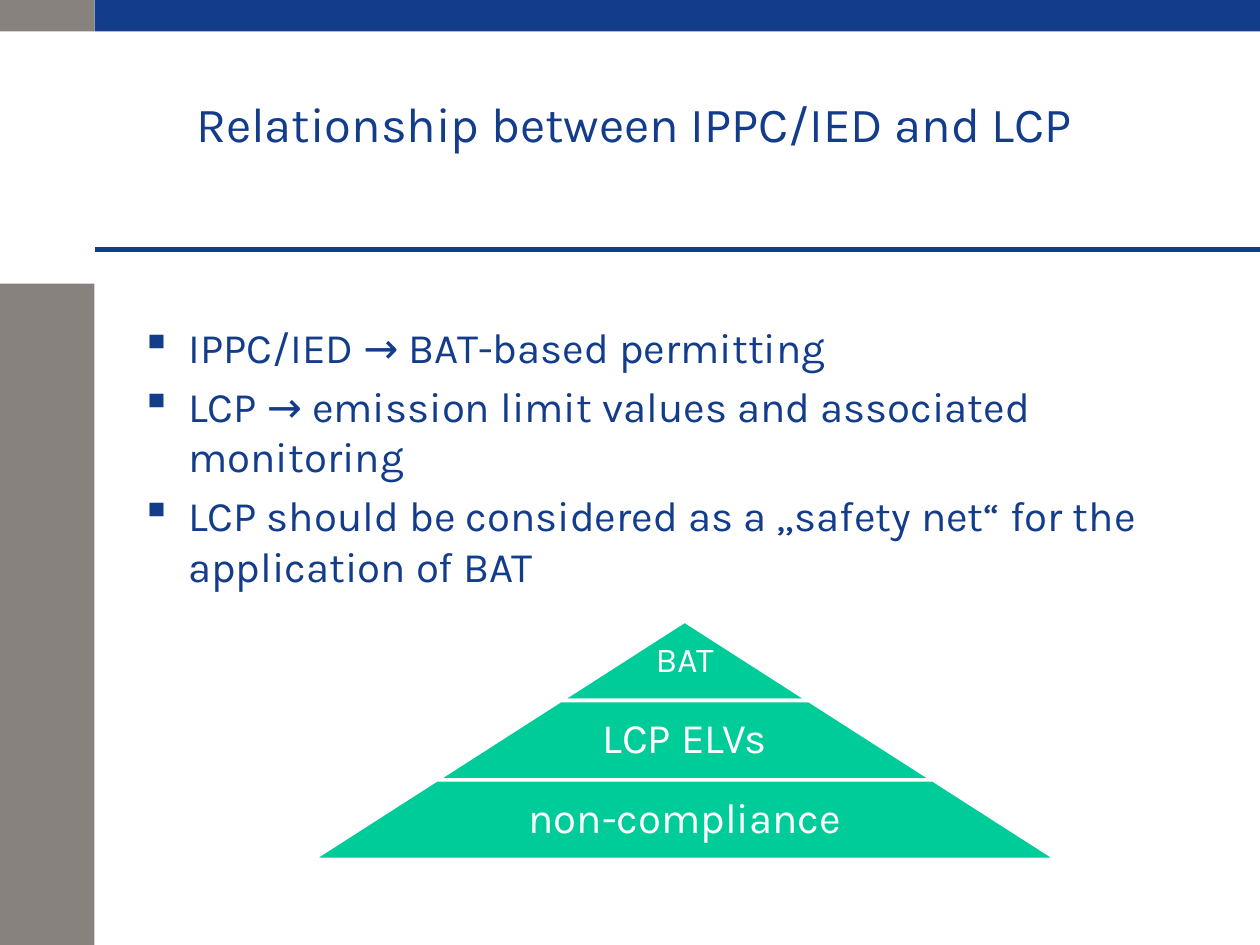
"""Build the slide on the relationship between IPPC/IED and LCP."""
from lxml import etree
from pptx import Presentation
from pptx.dml.color import RGBColor
from pptx.enum import shapes, text
from pptx.oxml import ns
from pptx.util import Pt

BLUE = RGBColor(0x13, 0x3C, 0x8B)
GREY = RGBColor(0x88, 0x82, 0x7E)
GREEN = RGBColor(0x00, 0xCC, 0x99)
WHITE = RGBColor(0xFF, 0xFF, 0xFF)
FONT = "Karla"

TITLE = "Relationship between IPPC/IED and LCP"
POINTS = [
    "IPPC/IED → BAT-based permitting",
    "LCP → emission limit values and associated monitoring",
    "LCP should be considered as a „safety net“ for the application of BAT",
]
TIERS = [("BAT", 20), ("LCP ELVs", 24), ("non-compliance", 24)]
BANDS = [
    (0, 162, 54, 378, GREY),
    (0, 0, 54, 18, GREY),
    (54, 0, 666, 18, BLUE),
]

PYRAMID_CENTER, PYRAMID_TOP = 391.3, 354.9
TIER_HEIGHT, TIER_STEP = 45.4, 141.8
TIER_SLOPE = 1.56


def add_block(slide, kind, left, top, width, height, fill):
    block = slide.shapes.add_shape(kind, Pt(left), Pt(top), Pt(width), Pt(height))
    block.shadow.inherit = False
    block.fill.solid()
    block.fill.fore_color.rgb = fill
    block.line.fill.background()
    return block


def add_bullet(paragraph, indent):
    properties = paragraph._p.get_or_add_pPr()
    properties.set("marL", str(Pt(indent)))
    properties.set("indent", str(-Pt(indent)))
    etree.SubElement(properties, ns.qn("a:buChar")).set("char", "▪")


def add_text(slide, lines, left, top, width, height, *, size, color=BLUE,
             anchor=text.MSO_ANCHOR.TOP, align=text.PP_ALIGN.LEFT,
             margins=(7.2, 3.6), spacing=None, gap=0, indent=None):
    box = slide.shapes.add_textbox(Pt(left), Pt(top), Pt(width), Pt(height))
    frame = box.text_frame
    frame.word_wrap = True
    frame.vertical_anchor = anchor
    frame.margin_left = frame.margin_right = Pt(margins[0])
    frame.margin_top = frame.margin_bottom = Pt(margins[1])
    for number, line in enumerate(lines):
        paragraph = frame.add_paragraph() if number else frame.paragraphs[0]
        paragraph.text = line
        paragraph.alignment = align
        if spacing:
            paragraph.line_spacing = spacing
        if number and gap:
            paragraph.space_before = Pt(gap)
        if indent:
            add_bullet(paragraph, indent)
        paragraph.font.name = FONT
        paragraph.font.size = Pt(size)
        paragraph.font.color.rgb = color


def add_rule(slide, left, right, y):
    rule = slide.shapes.add_connector(
        shapes.MSO_CONNECTOR.STRAIGHT, Pt(left), Pt(y), Pt(right), Pt(y))
    rule.line.color.rgb = BLUE
    rule.line.width = Pt(3)
    etree.SubElement(rule._element.spPr, ns.qn("a:effectLst"))


def add_pyramid(slide):
    for number, (label, size) in enumerate(TIERS):
        width = TIER_STEP * (number + 1)
        place = (PYRAMID_CENTER - width / 2, PYRAMID_TOP + number * TIER_HEIGHT,
                 width, TIER_HEIGHT)
        tier = add_block(slide, shapes.MSO_SHAPE.TRAPEZOID, *place, GREEN)
        tier.adjustments[0] = TIER_SLOPE
        tier.line.color.rgb = WHITE
        tier.line.width = Pt(2)
        add_text(slide, [label], *place, size=size, color=WHITE,
                 anchor=text.MSO_ANCHOR.MIDDLE, align=text.PP_ALIGN.CENTER,
                 margins=(2, 2), spacing=0.9)


def main():
    deck = Presentation()
    deck.slide_width, deck.slide_height = Pt(720), Pt(540)
    slide = deck.slides.add_slide(deck.slide_layouts[6])
    for *place, fill in BANDS:
        add_block(slide, shapes.MSO_SHAPE.RECTANGLE, *place, fill)
    add_rule(slide, 54, 720, 142.5)
    add_text(slide, POINTS, 73.5, 180, 600.5, 169, size=24, gap=5, indent=27)
    add_text(slide, [TITLE], 105, 37.5, 527, 66, size=28,
             anchor=text.MSO_ANCHOR.MIDDLE)
    add_pyramid(slide)
    deck.save("out.pptx")


if __name__ == "__main__":
    main()
